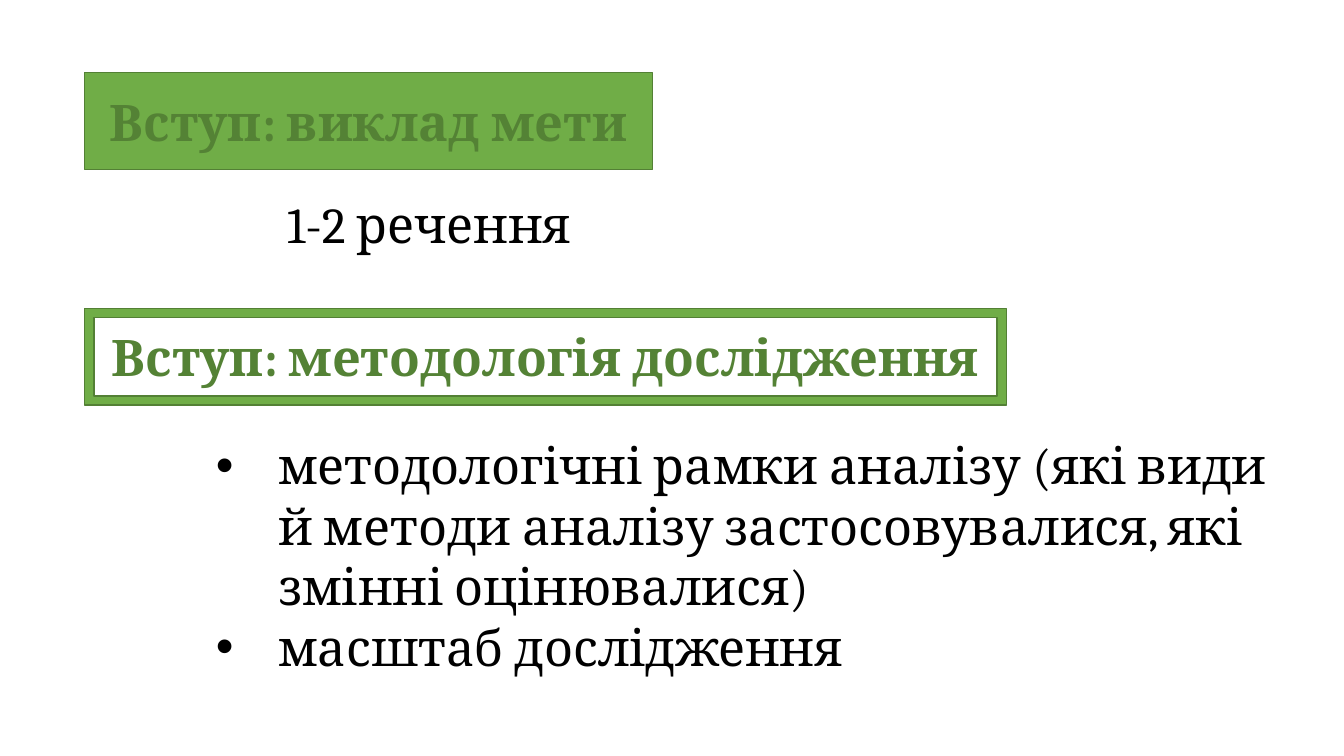
from copy import deepcopy

from lxml import etree
from pptx import Presentation
from pptx import util as u
from pptx.dml.color import RGBColor
from pptx.enum import shapes, text
from pptx.oxml.ns import qn

AIM_HEADING = "Вступ: виклад мети"
AIM_NOTE = "1-2 речення"
METHOD_HEADING = "Вступ: методологія дослідження"
METHOD_POINTS = [
    "методологічні рамки аналізу (які види й методи аналізу "
    "застосовувалися, які змінні оцінювалися)",
    "масштаб дослідження",
]

FONT, SIZE = "Cambria", 36
GREEN = RGBColor(0x70, 0xAD, 0x47)
EDGE_GREEN = RGBColor(0x53, 0x80, 0x35)
TEXT_GREEN = RGBColor(0x54, 0x82, 0x35)
BLACK = RGBColor(0, 0, 0)

HEADING_LEFT, HEADING_HEIGHT = 0.84, 0.96
FRAME_THICKNESS = 0.095
BULLET_INDENT = 0.62


def place(sp, left, top, width, height):
    sp.left, sp.top = u.Inches(left), u.Inches(top)
    sp.width, sp.height = u.Inches(width), u.Inches(height)


def add_bullet(p):
    pPr = p._p.get_or_add_pPr()
    pPr.set("marL", str(u.Inches(BULLET_INDENT)))
    pPr.set("indent", str(-u.Inches(BULLET_INDENT)))
    etree.SubElement(pPr, qn("a:buFont")).set("typeface", "Arial")
    etree.SubElement(pPr, qn("a:buChar")).set("char", "•")


def write(sp, lines, color=BLACK, bold=False, align=text.PP_ALIGN.LEFT,
          anchor=text.MSO_ANCHOR.TOP, bullets=False, inset=None,
          auto_size=text.MSO_AUTO_SIZE.NONE):
    tf = sp.text_frame
    tf.word_wrap = True
    tf.auto_size = auto_size
    tf.vertical_anchor = anchor
    if inset is not None:
        tf.margin_left = tf.margin_right = u.Inches(inset)
        tf.margin_top = tf.margin_bottom = u.Inches(inset)
    for i, line in enumerate(lines):
        p = tf.add_paragraph() if i else tf.paragraphs[0]
        if bullets:
            add_bullet(p)
        p.alignment = align
        p.space_before = u.Pt(0)
        r = p.add_run()
        r.text = line
        r.font.name, r.font.size = FONT, u.Pt(SIZE)
        r.font.bold = bold
        r.font.color.rgb = color


def format_heading(sp, line, top, width):
    place(sp, HEADING_LEFT, top, width, HEADING_HEIGHT)
    sp.fill.solid()
    sp.fill.fore_color.rgb = GREEN
    sp.line.color.rgb = EDGE_GREEN
    sp.line.width = u.Pt(1)
    write(sp, [line], color=TEXT_GREEN, bold=True, inset=0,
          align=text.PP_ALIGN.CENTER, anchor=text.MSO_ANCHOR.MIDDLE)


def main():
    prs = Presentation()
    prs.slide_width, prs.slide_height = u.Inches(13.33), u.Inches(7.5)
    s = prs.slides.add_slide(prs.slide_layouts[1])
    title, body = s.placeholders

    frame = s.shapes.add_shape(shapes.MSO_SHAPE.FRAME, 0, 0, 0, 0)
    frame.adjustments[0] = FRAME_THICKNESS
    frame.shadow.inherit = False
    format_heading(frame, METHOD_HEADING, 3.06, 9.14)

    # The title placeholder takes the same frame outline
    place(title, 0, 0, 1, 1)
    outline = frame._element.spPr.find(qn("a:prstGeom"))
    title._element.spPr.insert(1, deepcopy(outline))
    format_heading(title, AIM_HEADING, 0.72, 5.63)

    note = s.shapes.add_textbox(0, 0, 0, 0)
    place(note, 2.75, 1.87, 3.56, 0.71)
    write(note, [AIM_NOTE], auto_size=text.MSO_AUTO_SIZE.SHAPE_TO_FIT_TEXT)

    place(body, 2.04, 4.26, 10.94, 2.52)
    write(body, METHOD_POINTS, bullets=True,
          auto_size=text.MSO_AUTO_SIZE.SHAPE_TO_FIT_TEXT)

    prs.save("out.pptx")


if __name__ == "__main__":
    main()
